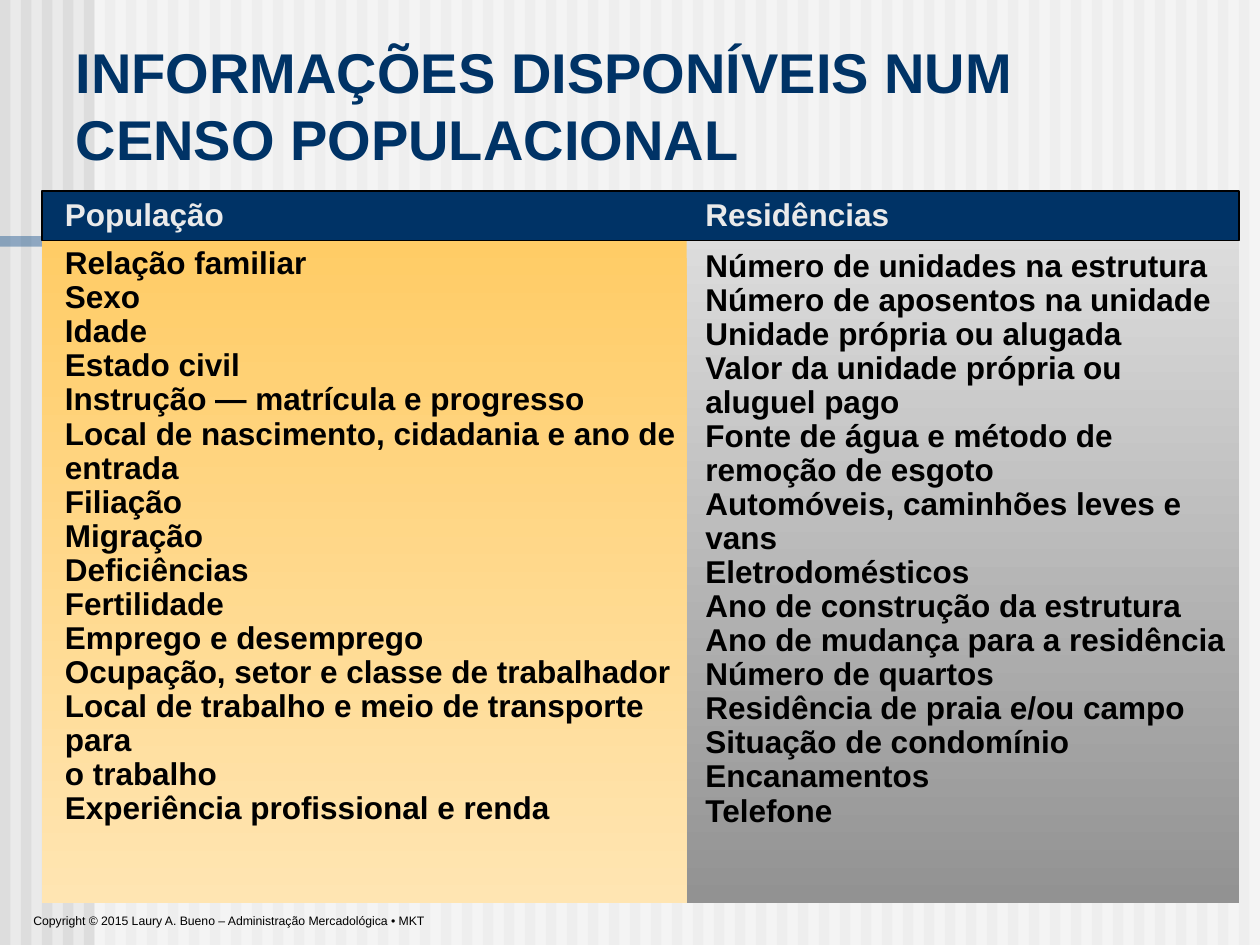
import pptx
import pptx.util
import pptx.dml.color
import pptx.enum.shapes
import pptx.enum.text
import lxml.etree

RGB = pptx.dml.color.RGBColor
NAVY = RGB(0x00, 0x33, 0x66)
STEEL = RGB(0x33, 0x66, 0x99)
PALE = RGB(0xEA, 0xEA, 0xEA)
STRIPE = RGB(0xDD, 0xDD, 0xDD)
GREY = RGB(0x92, 0x92, 0x92)
AMBER = RGB(0xFF, 0xCC, 0x66)
CREAM = RGB(0xFF, 0xE5, 0xB2)
WHITE = RGB(0xFF, 0xFF, 0xFF)
BLACK = RGB(0, 0, 0)

deck = pptx.Presentation()
deck.slide_width = pptx.util.Inches(10)
deck.slide_height = pptx.util.Inches(7.5)
COLUMN = deck.slide_width / 60
ROW = deck.slide_height / 90

slide = deck.slides.add_slide(deck.slide_layouts[5])
slide.background.fill.solid()
slide.background.fill.fore_color.rgb = PALE


def block(left, top, width, height, color, end_color=None, alpha=None):
    """Rectangle in grid units, plain or shaded from top to bottom."""
    rect = slide.shapes.add_shape(
        pptx.enum.shapes.MSO_SHAPE.RECTANGLE,
        round(left * COLUMN), round(top * ROW),
        round(width * COLUMN), round(height * ROW))
    rect.shadow.inherit = False
    rect.line.fill.background()
    if end_color is None:
        rect.fill.solid()
        rect.fill.fore_color.rgb = color
    else:
        rect.fill.gradient()
        rect.fill.gradient_angle = 270
        for stop, shade in zip(rect.fill.gradient_stops, (color, end_color)):
            stop.color.rgb = shade
    if alpha is not None:
        tone = next(rect.element.spPr.iter("{*}srgbClr"))
        namespace = lxml.etree.QName(tone).namespace
        lxml.etree.SubElement(tone, f"{{{namespace}}}alpha", val=str(alpha * 1000))
    return rect


def write(left, top, width, height, lines, size=18, color=BLACK, bold=True,
          spacing=None, wrap=True):
    """Text box in grid units, one paragraph per line."""
    box = slide.shapes.add_textbox(
        round(left * COLUMN), round(top * ROW),
        round(width * COLUMN), round(height * ROW))
    frame = box.text_frame
    frame.word_wrap = wrap
    frame.text = "\n".join(lines)
    for paragraph in frame.paragraphs:
        paragraph.line_spacing = spacing
        paragraph.font.name = "Arial"
        paragraph.font.size = pptx.util.Pt(size)
        paragraph.font.bold = bold
        paragraph.font.color.rgb = color


# Striped backdrop, veiled to the right of the margin, with an accent bar
for stripe in range(60):
    block(stripe, 0, 0.5, 90, STRIPE)
block(4.5, 0, 55.5, 90, WHITE, alpha=50)
block(0, 22.5, 45.6, 1, STEEL, alpha=50)

# Housing column
block(28.5, 22, 30.5, 64, STRIPE, GREY)
write(33, 23.25, 26, 59.6, [
    "Número de unidades na estrutura",
    "Número de aposentos na unidade",
    "Unidade própria ou alugada",
    "Valor da unidade própria ou aluguel pago",
    "Fonte de água e método de remoção de esgoto",
    "Automóveis, caminhões leves e vans",
    "Eletrodomésticos",
    "Ano de construção da estrutura",
    "Ano de mudança para a residência",
    "Número de quartos",
    "Residência de praia e/ou campo",
    "Situação de condomínio",
    "Encanamentos",
    "Telefone",
], spacing=0.9)

# Title, brought in front of the backdrop
title = slide.shapes.title
title.element.getparent().append(title.element)
title.left, title.top = round(3 * COLUMN), round(2 * ROW)
title.width, title.height = round(54 * COLUMN), round(16 * ROW)
title.text_frame.text = "INFORMAÇÕES DISPONÍVEIS NUM CENSO POPULACIONAL"
title.text_frame.word_wrap = True
title.text_frame.auto_size = pptx.enum.text.MSO_AUTO_SIZE.NONE
title.text_frame.vertical_anchor = pptx.enum.text.MSO_ANCHOR.MIDDLE
heading = title.text_frame.paragraphs[0]
heading.alignment = pptx.enum.text.PP_ALIGN.LEFT
heading.font.name = "Arial"
heading.font.size = pptx.util.Pt(32)
heading.font.bold = True
heading.font.color.rgb = NAVY

# Population column and the header band over both columns
block(2, 22.9, 30.7, 63.1, AMBER, CREAM)
header = block(2, 18.2, 57, 4.7, NAVY)
header.line.color.rgb = BLACK
header.line.width = pptx.util.Pt(1)
write(2.5, 23, 30.4, 62.9, [
    "Relação familiar",
    "Sexo",
    "Idade",
    "Estado civil",
    "Instrução — matrícula e progresso",
    "Local de nascimento, cidadania e ano de entrada",
    "Filiação",
    "Migração",
    "Deficiências",
    "Fertilidade",
    "Emprego e desemprego",
    "Ocupação, setor e classe de trabalhador",
    "Local de trabalho e meio de transporte para",
    "o trabalho",
    "Experiência profissional e renda",
], spacing=0.9)

# Column headings
for left, name in ((2.5, "População"), (33, "Residências")):
    write(left, 18, 14.3, 4.8, [name], color=PALE)

# Copyright line
write(1, 86.4, 20.2, 2.6,
      ["Copyright © 2015 Laury A. Bueno – Administração Mercadológica • MKT"],
      size=7, bold=False, wrap=False)

deck.save("out.pptx")
